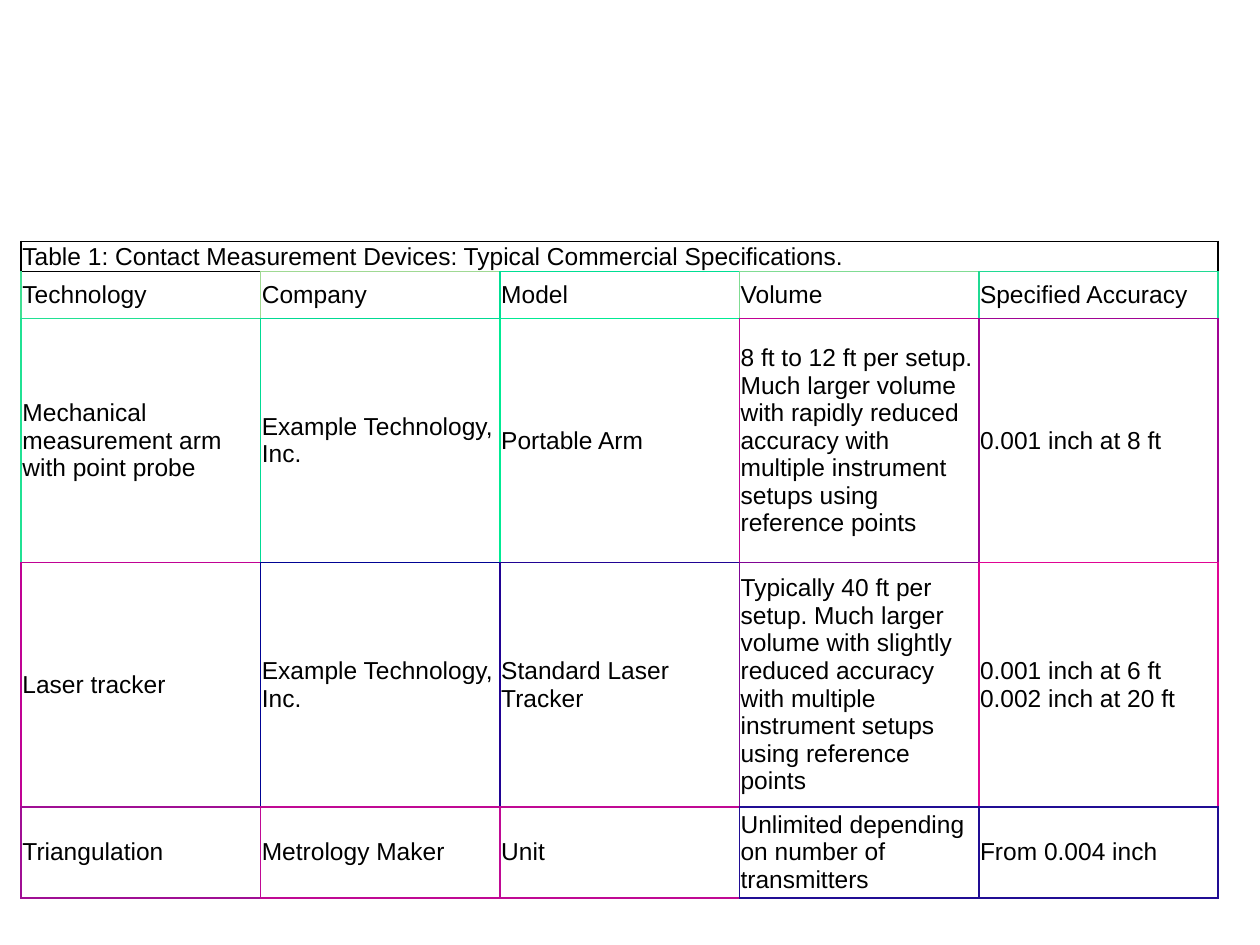
"""Build a slide with a bordered table of contact measurement devices."""
from lxml import etree
from pptx import Presentation
from pptx.dml.color import RGBColor
from pptx.enum.text import MSO_ANCHOR
from pptx.oxml.ns import qn
from pptx.util import Pt

MIDDLE = MSO_ANCHOR.MIDDLE
BLACK = "000000"
CAPTION = "Table 1: Contact Measurement Devices: Typical Commercial Specifications."
DEVICES = [
    ["Technology", "Company", "Model", "Volume", "Specified Accuracy"],
    ["Mechanical measurement arm with point probe", "Example Technology, Inc.", "Portable Arm",
     "8 ft to 12 ft per setup. Much larger volume with rapidly reduced accuracy "
     "with multiple instrument setups using reference points",
     "0.001 inch at 8 ft"],
    ["Laser tracker", "Example Technology, Inc.", "Standard Laser Tracker",
     "Typically 40 ft per setup. Much larger volume with slightly reduced accuracy "
     "with multiple instrument setups using reference points",
     "0.001 inch at 6 ft\n0.002 inch at 20 ft"],
    ["Triangulation", "Metrology Maker", "Unit",
     "Unlimited depending on number of transmitters", "From 0.004 inch"],
]
EDGE_COLORS = [
    ["40DF93", "A0D993", "00DE93", "80DC93", "20DA93"],
    ["20E193", "00DA93", "00EA93", "C00194", "A00494"],
    ["C00294", "000394", "200394", "800594", "E00594"],
    ["A00F94", "C00994", "C00994", "200D94", "200D94"],
]
ROW_HEIGHTS = [14.4, 26.9, 139.5, 139.5, 52]
COLUMN_WIDTH = 136.8
CELL_FORMAT = {
    "margin_left": Pt(0.72), "margin_right": Pt(0.72),
    "margin_top": Pt(0.72), "margin_bottom": Pt(0.72),
    "vertical_anchor": MIDDLE,
}


def rgb(color):
    return RGBColor.from_string(color)


def fill_cell(cell, text, edges):
    cell.text = text
    for name, value in CELL_FORMAT.items():
        setattr(cell, name, value)
    for paragraph in cell.text_frame.paragraphs:
        paragraph.font.size = Pt(14)
        paragraph.font.name = "Arial"
        paragraph.font.color.rgb = rgb(BLACK)
    properties = cell._tc.get_or_add_tcPr()
    for side, color in zip("LRTB", edges):
        line = etree.SubElement(properties, qn("a:ln" + side), w=str(Pt(1)))
        solid = etree.SubElement(line, qn("a:solidFill"))
        etree.SubElement(solid, qn("a:srgbClr"), val=color)
    cell.fill.solid()
    cell.fill.fore_color.rgb = rgb("FFFFFF")


prs = Presentation()
prs.slide_width, prs.slide_height = Pt(720), Pt(540)
slide = prs.slides.add_slide(prs.slide_layouts[6])

column_count = len(DEVICES[0])
devices = slide.shapes.add_table(
    len(ROW_HEIGHTS), column_count, Pt(12.1), Pt(138),
    Pt(COLUMN_WIDTH * column_count), Pt(sum(ROW_HEIGHTS))).table
devices.first_row = False
devices.horz_banding = False
for column in devices.columns:
    column.width = Pt(COLUMN_WIDTH)
for row, height in zip(devices.rows, ROW_HEIGHTS):
    row.height = Pt(height)

devices.cell(0, 0).merge(devices.cell(0, column_count - 1))
fill_cell(devices.cell(0, 0), CAPTION, [BLACK] * 4)

for r, texts in enumerate(DEVICES):
    for c, text in enumerate(texts):
        own = EDGE_COLORS[r][c]
        right = EDGE_COLORS[r][min(c + 1, column_count - 1)]
        below = EDGE_COLORS[min(r + 1, len(DEVICES) - 1)][c]
        top = BLACK if r == c == 0 else own
        fill_cell(devices.cell(r + 1, c), text, [own, right, top, below])

prs.save("out.pptx")
